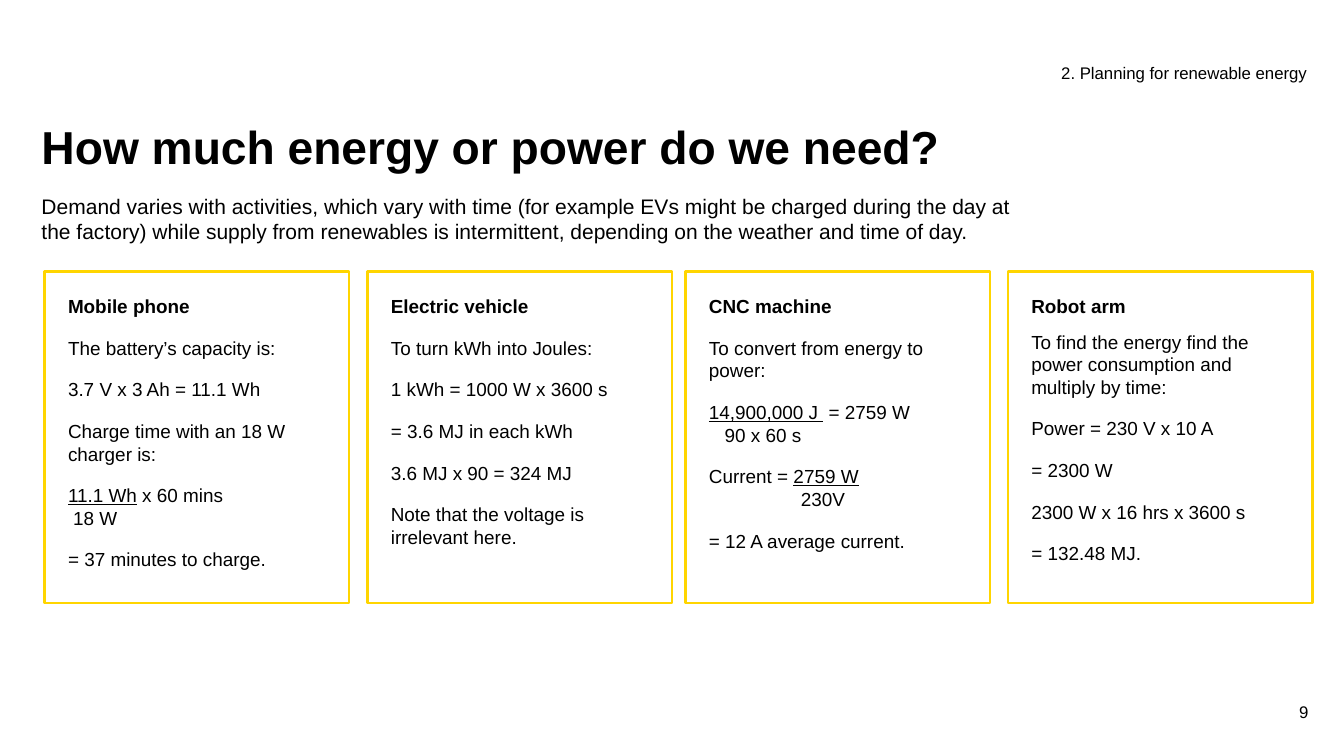
from pptx import Presentation
from pptx.dml.color import RGBColor
from pptx.enum.shapes import MSO_SHAPE
from pptx.enum.text import MSO_ANCHOR, PP_ALIGN
from pptx.util import Pt

RECT = MSO_SHAPE.RECTANGLE
TOP, MIDDLE = MSO_ANCHOR.TOP, MSO_ANCHOR.MIDDLE
LEFT, RIGHT = PP_ALIGN.LEFT, PP_ALIGN.RIGHT
FONT = "Arial"
COLORS = {"ink": "000000", "edge": "FFD500"}

CARDS = [
    (42.5, 12, 6, "Mobile phone", [
        "The battery’s capacity is:",
        "3.7 V x 3 Ah = 11.1 Wh",
        "Charge time with an 18 W charger is:",
        "_11.1 Wh_ x 60 mins",
        ("18 W", 5),
        "= 37 minutes to charge."]),
    (350, 12, 6, "Electric vehicle", [
        "To turn kWh into Joules:",
        "1 kWh = 1000 W x 3600 s",
        "= 3.6 MJ in each kWh",
        "3.6 MJ x 90 = 324 MJ",
        "Note that the voltage is irrelevant here."]),
    (653, 12, 6, "CNC machine", [
        "To convert from energy to power:",
        "_14,900,000 J _ = 2759 W",
        ("90 x 60 s", 15),
        "Current = _2759 W_",
        ("230V", 87.5),
        "= 12 A average current."]),
    (960, 6, 12, "Robot arm", [
        "To find the energy find the power consumption and multiply by time:",
        "Power = 230 V x 10 A",
        "= 2300 W",
        "2300 W x 16 hrs x 3600 s",
        "= 132.48 MJ."]),
]


def style(run, size, bold=False, under=False):
    """Set the font of a run."""
    font = run.font
    font.name, font.size, font.bold = FONT, Pt(size), bold
    font.underline = under
    font.color.rgb = RGBColor.from_string(COLORS["ink"])


def frame(shape, side, edge, anchor=TOP):
    """Set the insets, wrap and anchor of a shape's text."""
    text = shape.text_frame
    text.word_wrap = True
    text.margin_left = text.margin_right = Pt(side)
    text.margin_top = text.margin_bottom = Pt(edge)
    text.vertical_anchor = anchor
    return text


def label(slide, box, words, size, bold=False, align=LEFT, inset=(7.2, 3.6),
          anchor=TOP, space=1.0):
    """Place one plain text in its box."""
    area = slide.shapes.add_textbox(*map(Pt, box))
    text = frame(area, *inset, anchor)
    text.text = words
    para = text.paragraphs[0]
    para.alignment, para.line_spacing = align, space
    for run in para.runs:
        style(run, size, bold)


def card(slide, box, before, after, head, lines):
    """Place a framed card with a heading and its sums."""
    shape = slide.shapes.add_shape(RECT, *map(Pt, box))
    shape.shadow.inherit = False
    shape.fill.background()
    shape.line.color.rgb = RGBColor.from_string(COLORS["edge"])
    shape.line.width = Pt(2.25)
    text = frame(shape, 22.3, 22.3)
    text.text = head
    para = text.paragraphs[0]
    para.alignment, para.space_after = LEFT, Pt(6)
    style(para.runs[0], 18, True)
    for line in lines:
        lower = isinstance(line, tuple)
        words, indent = line if lower else (line, 0)
        if lower:
            para.space_after = Pt(0)
        para = text.add_paragraph()
        para.alignment = LEFT
        para.space_before = Pt(0 if lower else before)
        para.space_after = Pt(after)
        if indent:
            props = para._p.get_or_add_pPr()
            props.set("marL", str(Pt(indent)))
            props.set("indent", "0")
        for spot, part in enumerate(words.split("_")):
            if part:
                run = para.add_run()
                run.text = part
                style(run, 18, under=spot % 2 == 1)


def header(slide, box):
    """Place the section name, title and lead text."""
    left, top, width = box
    label(slide, (left + 971.3, top, 250, 38), "2. Planning for renewable energy", 16)
    label(slide, (left, top + 57.6, width, 57.6), "How much energy or power do we need?",
          44, True, anchor=MIDDLE, space=0.9)
    label(slide, (left, top + 124.6, width, 51),
          "Demand varies with activities, which vary with time (for example EVs might be "
          "charged during the day at\vthe factory) while supply from renewables is "
          "intermittent, depending on the weather and time of day.", 20)


def main():
    """Build the slide and save it."""
    deck = Presentation()
    deck.slide_width, deck.slide_height = Pt(1280.16), Pt(720)
    slide = deck.slides.add_slide(deck.slide_layouts[6])
    header(slide, (32.4, 56.2, 1158.5))
    for left, *rest in CARDS:
        card(slide, (left, 258.5, 290.2, 316), *rest)
    label(slide, (1203.8, 668.2, 42.5, 38), "9", 16, align=RIGHT, inset=(0, 0))
    deck.save("out.pptx")


if __name__ == "__main__":
    main()
